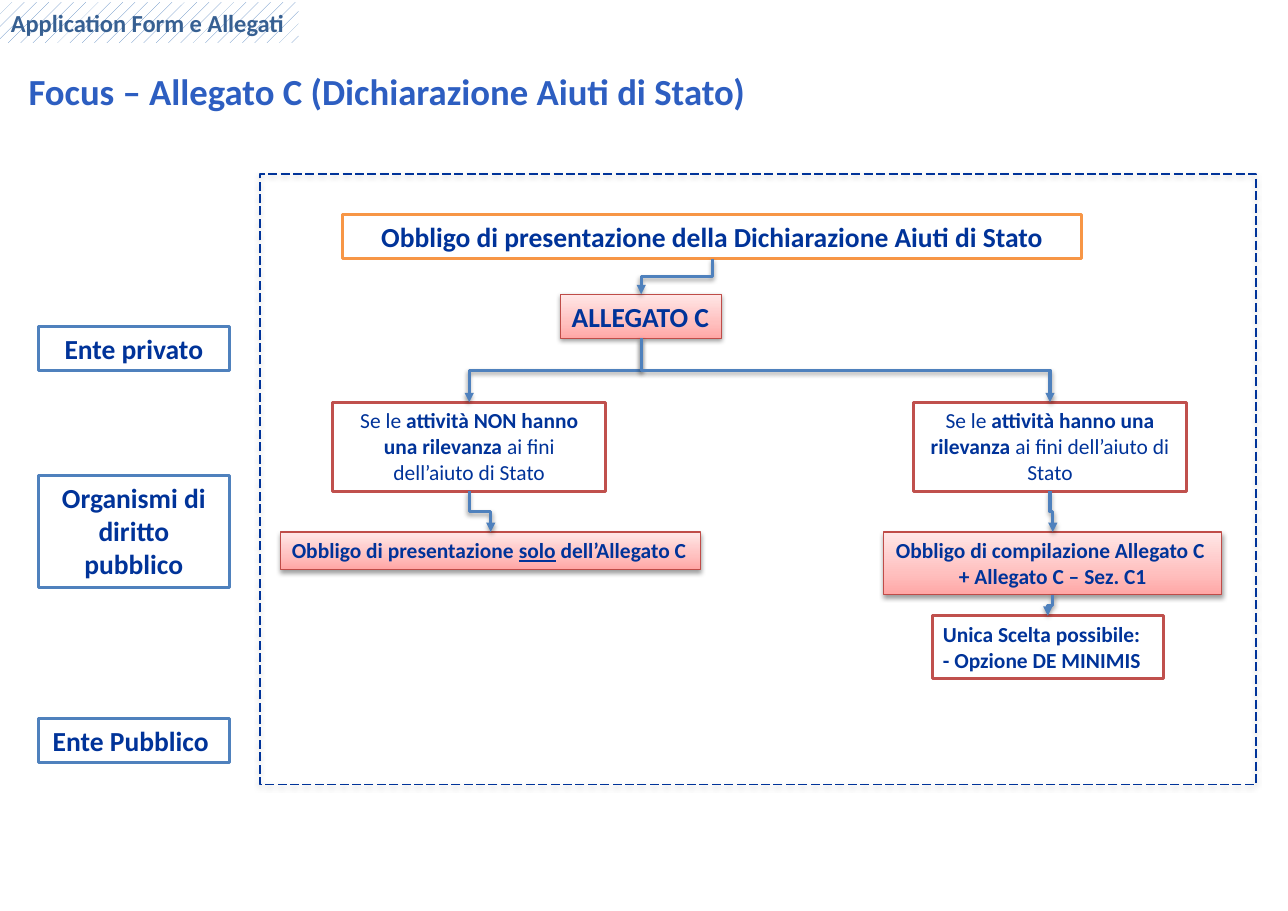
from copy import deepcopy

from lxml.etree import SubElement
from pptx import Presentation
from pptx.dml.color import RGBColor
from pptx.enum.dml import MSO_LINE, MSO_PATTERN
from pptx.enum.shapes import MSO_CONNECTOR, MSO_SHAPE
from pptx.enum.text import MSO_ANCHOR, MSO_AUTO_SIZE, PP_ALIGN
from pptx.oxml.ns import qn
from pptx.util import Inches, Pt

NAVY = RGBColor(0x00, 0x33, 0x99)
TITLE_BLUE = RGBColor(0x2D, 0x5E, 0xC1)
TAG_BLUE = RGBColor(0x37, 0x60, 0x92)
STEEL = RGBColor(0x4F, 0x81, 0xBD)
ORANGE = RGBColor(0xF7, 0x96, 0x46)
RED = RGBColor(0xC0, 0x50, 0x4D)
DARK_RED = RGBColor(0xBF, 0x4C, 0x48)
WHITE = RGBColor(0xFF, 0xFF, 0xFF)
PINKS = [
    (0, RGBColor(0xFF, 0xA6, 0xA5)),
    (0.35, RGBColor(0xFF, 0xC0, 0xBF)),
    (1, RGBColor(0xFF, 0xE7, 0xE7)),
]
TOP, BOTTOM = 0, 2


def write_text(frame, paragraphs, size=18, color=NAVY, bold=True,
               align=PP_ALIGN.CENTER, wrap=True, anchor=MSO_ANCHOR.TOP):
    """Each paragraph is a string or a list of (text, font changes) spans."""
    frame.word_wrap = wrap
    frame.vertical_anchor = anchor
    for index, content in enumerate(paragraphs):
        para = frame.add_paragraph() if index else frame.paragraphs[0]
        para.alignment = align
        spans = [(content, {})] if isinstance(content, str) else content
        for text, changes in spans:
            span = para.add_run()
            span.text = text
            span.font.name = "Calibri"
            span.font.size = Pt(size)
            span.font.color.rgb = color
            span.font.bold = changes.get("bold", bold)
            if changes.get("underline"):
                span.font.underline = True


class FlowSlide:
    """Places elements by percentages of the slide's width and height."""

    def __init__(self, deck):
        self.deck = deck
        self.page = deck.slides.add_slide(deck.slide_layouts[6])

    def area(self, left, top, width, height):
        across, down = self.deck.slide_width / 100, self.deck.slide_height / 100
        return [round(v) for v in (left * across, top * down, width * across, height * down)]

    def add_shadow(self, effects, opacity=38, distance=1.6):
        shadow = SubElement(effects, qn("a:outerShdw"), blurRad=str(Pt(3.1)),
                            dist=str(Pt(distance)), dir="5400000", rotWithShape="0")
        color = SubElement(shadow, qn("a:srgbClr"), val="000000")
        SubElement(color, qn("a:alpha"), val=str(opacity * 1000))

    def rectangle(self, place, line=None, width=2.0):
        box = self.page.shapes.add_shape(MSO_SHAPE.RECTANGLE, *self.area(*place))
        if line is None:
            box.line.fill.background()
        else:
            box.line.color.rgb = line
            box.line.width = Pt(width)
        box.shadow.inherit = False
        return box

    def frame(self, place):
        box = self.rectangle(place, NAVY, 0.75)
        box.fill.background()
        box.line.dash_style = MSO_LINE.LONG_DASH
        self.add_shadow(box.element.spPr.find(qn("a:effectLst")), 35, 1.8)

    def tag(self, place, text):
        box = self.rectangle(place)
        box.fill.patterned()
        box.fill.pattern = MSO_PATTERN.PERCENT_10
        box.fill.fore_color.rgb = STEEL
        box.fill.back_color.rgb = WHITE
        write_text(box.text_frame, [text], size=16, color=TAG_BLUE,
                   align=PP_ALIGN.LEFT, wrap=False)
        box.text_frame.auto_size = MSO_AUTO_SIZE.SHAPE_TO_FIT_TEXT

    def title(self, place, text):
        box = self.page.shapes.add_textbox(*self.area(*place))
        frame = box.text_frame
        frame.margin_left = frame.margin_right = Inches(0.11)
        frame.margin_top = frame.margin_bottom = Inches(0.06)
        write_text(frame, [text], size=24, color=TITLE_BLUE,
                   align=PP_ALIGN.LEFT, anchor=MSO_ANCHOR.MIDDLE)

    def outlined(self, place, line, *paragraphs, **style):
        box = self.rectangle(place, line)
        box.fill.solid()
        box.fill.fore_color.rgb = WHITE
        write_text(box.text_frame, paragraphs, **style)
        box.text_frame.auto_size = MSO_AUTO_SIZE.SHAPE_TO_FIT_TEXT
        return box

    def shaded(self, place, *paragraphs, **style):
        box = self.rectangle(place, DARK_RED, 0.75)
        box.fill.gradient()
        box.fill.gradient_angle = 90
        stops = box.element.spPr.find(".//" + qn("a:gsLst"))
        stops.insert(1, deepcopy(stops[0]))
        for stop, (position, color) in zip(box.fill.gradient_stops, PINKS):
            stop.position = position
            stop.color.rgb = color
        self.add_shadow(box.element.spPr.find(qn("a:effectLst")))
        write_text(box.text_frame, paragraphs, wrap=False, **style)
        box.text_frame.auto_size = MSO_AUTO_SIZE.SHAPE_TO_FIT_TEXT
        return box

    def arrow(self, upper, lower):
        """Elbow arrow from the bottom of one box to the top of another."""
        x1, y1 = upper.left + upper.width // 2, upper.top + upper.height
        x2, y2 = lower.left + lower.width // 2, lower.top
        link = self.page.shapes.add_connector(MSO_CONNECTOR.ELBOW, x1, y1, x2, y2)
        link.begin_connect(upper, BOTTOM)
        link.end_connect(lower, TOP)
        # A quarter turn makes the elbow leave downwards
        link.width, link.height = y2 - y1, abs(x2 - x1)
        link.left = (x1 + x2 - link.width) // 2
        link.top = (y1 + y2 - link.height) // 2
        rightward = x2 > x1
        properties = link.element.spPr
        turn = properties.find(qn("a:xfrm"))
        turn.set("rot", "16200000" if rightward else "5400000")
        turn.set("flipH", "1" if rightward else "0")
        turn.set("flipV", "0")
        link.line.color.rgb = STEEL
        link.line.width = Pt(2)
        SubElement(properties.find(qn("a:ln")), qn("a:tailEnd"), type="triangle")
        self.add_shadow(SubElement(properties, qn("a:effectLst")))


def main():
    deck = Presentation()
    deck.slide_width, deck.slide_height = Inches(11.69), Inches(8.27)
    flow = FlowSlide(deck)

    # Frame and headings
    flow.frame((20.19, 19.11, 77.33, 66.99))
    flow.tag((0, 0.24, 23.18, 4.47), "Application Form e Allegati")
    flow.title((1.28, 6.05, 59.2, 7.86), "Focus – Allegato C (Dichiarazione Aiuti di Stato)")

    # Kinds of applicant
    for top, height, name in [
        (35.79, 4.84, "Ente privato"),
        (52.24, 12.21, "Organismi di diritto pubblico"),
        (78.84, 4.84, "Ente Pubblico "),
    ]:
        flow.outlined((2.99, top, 14.8, height), STEEL, name)

    # Obligation and its form
    duty = flow.outlined((26.6, 23.58, 57.4, 4.84), ORANGE,
                         "Obbligo di presentazione della Dichiarazione Aiuti di Stato")
    form = flow.shaded((43.54, 32.29, 12.49, 4.84), "ALLEGATO C", align=PP_ALIGN.LEFT)

    # The two conditions
    conditions = [
        flow.outlined((left, 44.14, 21.21, 9.79), RED,
                      [("Se le ", {}), (claim, {"bold": True}),
                       ("ai fini dell’aiuto di Stato", {})],
                      size=14, bold=False)
        for left, claim in [(25.83, "attività NON hanno una rilevanza "),
                            (70.92, "attività hanno una rilevanza ")]
    ]

    # What each condition requires
    only_c = flow.shaded((21.81, 58.4, 32.59, 4.11),
                         [("Obbligo di presentazione ", {}), ("solo", {"underline": True}),
                          (" dell’Allegato C", {})],
                         size=14, align=PP_ALIGN.LEFT)
    with_c1 = flow.shaded((68.61, 58.4, 26.26, 6.89),
                          "Obbligo di compilazione Allegato C ",
                          "+ Allegato C – Sez. C1", size=14)
    choice = flow.outlined((72.37, 67.59, 17.96, 6.89), RED,
                           "Unica Scelta possibile:", "- Opzione DE MINIMIS",
                           size=14, align=PP_ALIGN.LEFT, wrap=False)

    # Arrows
    flow.arrow(duty, form)
    for condition, outcome in zip(conditions, (only_c, with_c1)):
        flow.arrow(form, condition)
        flow.arrow(condition, outcome)
    flow.arrow(with_c1, choice)

    deck.save("out.pptx")


if __name__ == "__main__":
    main()
